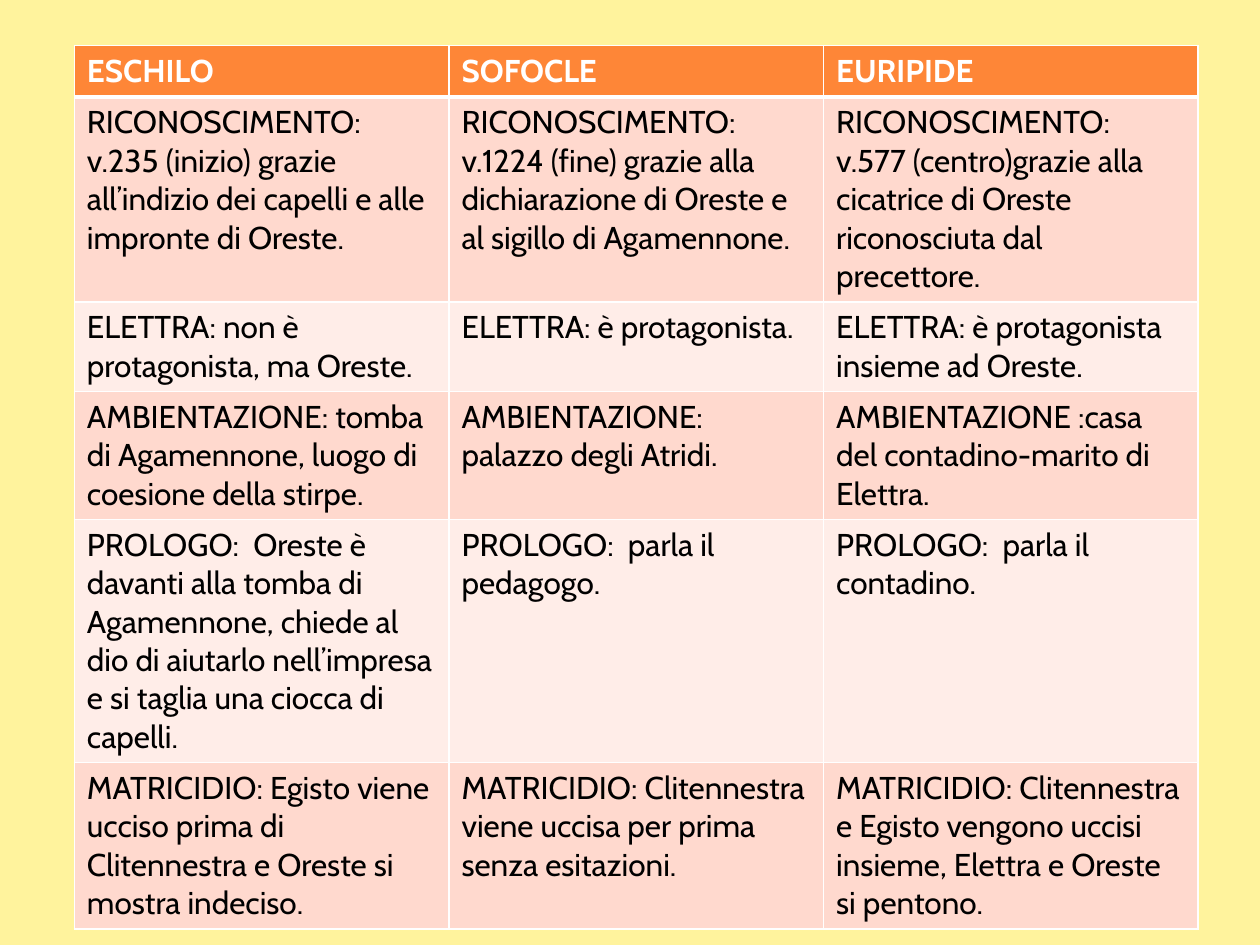
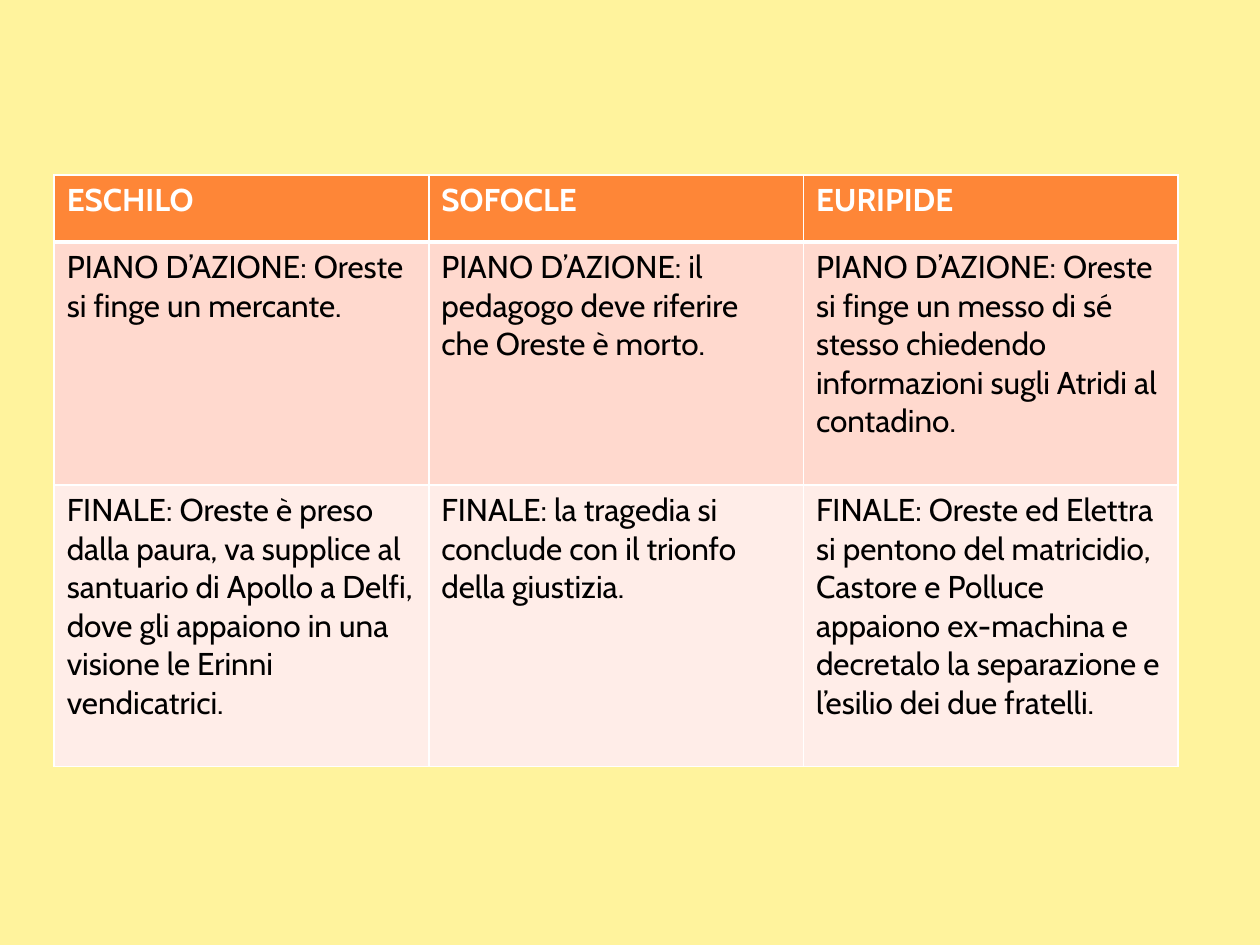
from lxml import etree
from pptx import Presentation
from pptx.dml.color import RGBColor
from pptx.oxml.ns import qn
from pptx.util import Inches, Pt

AUTHORS = ("ESCHILO", "SOFOCLE", "EURIPIDE")

# Each body row: height in text lines, then one cell per author.
# A line break inside a cell starts a new paragraph.
COMPARISONS = [
    {
        "left": 0.59, "top": 0.36, "header_height": 0.41,
        "rows": [
            (5, "RICONOSCIMENTO:\nv.235 (inizio) grazie all’indizio dei capelli e alle "
                "impronte di Oreste.",
             "RICONOSCIMENTO:\nv.1224 (fine) grazie alla dichiarazione di Oreste e al "
             "sigillo di Agamennone.",
             "RICONOSCIMENTO:\nv.577 (centro)grazie alla cicatrice di Oreste "
             "riconosciuta dal precettore."),
            (2, "ELETTRA: non è protagonista, ma Oreste.",
             "ELETTRA: è protagonista.",
             "ELETTRA: è protagonista insieme ad Oreste."),
            (3, "AMBIENTAZIONE: tomba di Agamennone, luogo di coesione della stirpe.",
             "AMBIENTAZIONE: palazzo degli Atridi.",
             "AMBIENTAZIONE :casa del contadino-marito di Elettra."),
            (6, "PROLOGO:  Oreste è davanti alla tomba di Agamennone, chiede al dio di "
                "aiutarlo nell’impresa e si taglia una ciocca di capelli.",
             "PROLOGO:  parla il pedagogo.",
             "PROLOGO:  parla il contadino."),
            (4, "MATRICIDIO: Egisto viene ucciso prima di Clitennestra e Oreste si "
                "mostra indeciso.",
             "MATRICIDIO: Clitennestra viene uccisa per prima senza esitazioni.",
             "MATRICIDIO: Clitennestra e Egisto vengono uccisi insieme, Elettra e "
             "Oreste si pentono."),
        ],
    },
    {
        "left": 0.43, "top": 1.39, "header_height": 0.53,
        "rows": [
            (6, "PIANO D’AZIONE: Oreste si finge un mercante.",
             "PIANO D’AZIONE: il pedagogo deve riferire che Oreste è morto.",
             "PIANO D’AZIONE: Oreste si finge un messo di sé stesso chiedendo "
             "informazioni sugli Atridi al contadino."),
            (7, "FINALE: Oreste è preso dalla paura, va supplice al santuario di Apollo "
                "a Delfi, dove gli appaiono in una visione le Erinni vendicatrici.",
             "FINALE: la tragedia si conclude con il trionfo della giustizia.",
             "FINALE: Oreste ed Elettra si pentono del matricidio, Castore e Polluce "
             "appaiono ex-machina e decretalo la separazione e l’esilio dei due "
             "fratelli."),
        ],
    },
]

FONT, FONT_SIZE = "Cabin", Pt(18)
WHITE = RGBColor(0xFF, 0xFF, 0xFF)
BLACK = RGBColor(0, 0, 0)
CREAM = RGBColor(0xFF, 0xF3, 0x9D)
ORANGE = RGBColor(0xFE, 0x86, 0x37)
BANDS = (RGBColor(0xFF, 0xD9, 0xCE), RGBColor(0xFF, 0xED, 0xE8))

TABLE_WIDTH = 8.92
LINE_HEIGHT, CELL_PADDING = 0.305, 0.1
THIN, THICK = 1, 3


def set_borders(cell, top, bottom):
    """Draw white borders; top and bottom are widths in points."""
    tc_pr = cell._tc.get_or_add_tcPr()
    widths = {"a:lnL": THIN, "a:lnR": THIN, "a:lnT": top, "a:lnB": bottom}
    for position, (tag, width) in enumerate(widths.items()):
        ln = etree.Element(qn(tag), w=str(Pt(width)))
        fill = etree.SubElement(ln, qn("a:solidFill"))
        etree.SubElement(fill, qn("a:srgbClr"), val=str(WHITE))
        tc_pr.insert(position, ln)


def fill_cell(cell, text, fill, color, bold):
    cell.fill.solid()
    cell.fill.fore_color.rgb = fill
    tf = cell.text_frame
    for i, line in enumerate(text.split("\n")):
        p = tf.add_paragraph() if i else tf.paragraphs[0]
        r = p.add_run()
        r.text = line
        r.font.name, r.font.size = FONT, FONT_SIZE
        r.font.color.rgb, r.font.bold = color, bold


def add_comparison(slide, left, top, header_height, rows):
    heights = [header_height] + [n * LINE_HEIGHT + CELL_PADDING for n, *_ in rows]
    texts = [AUTHORS] + [cells for _, *cells in rows]
    table = slide.shapes.add_table(
        len(texts), len(AUTHORS), Inches(left), Inches(top),
        Inches(TABLE_WIDTH), Inches(sum(heights))).table
    for column in table.columns:
        column.width = Inches(TABLE_WIDTH / len(AUTHORS))
    for i, (height, cells) in enumerate(zip(heights, texts)):
        table.rows[i].height = Inches(height)
        header = i == 0
        fill = ORANGE if header else BANDS[(i - 1) % 2]
        for j, text in enumerate(cells):
            cell = table.cell(i, j)
            fill_cell(cell, text, fill, WHITE if header else BLACK, header)
            set_borders(cell, top=THICK if i == 1 else THIN,
                        bottom=THICK if header else THIN)


def main():
    prs = Presentation()
    prs.slide_width, prs.slide_height = Inches(10), Inches(7.5)
    for comparison in COMPARISONS:
        slide = prs.slides.add_slide(prs.slide_layouts[6])
        slide.background.fill.solid()
        slide.background.fill.fore_color.rgb = CREAM
        add_comparison(slide, **comparison)
    prs.save("out.pptx")


if __name__ == "__main__":
    main()
